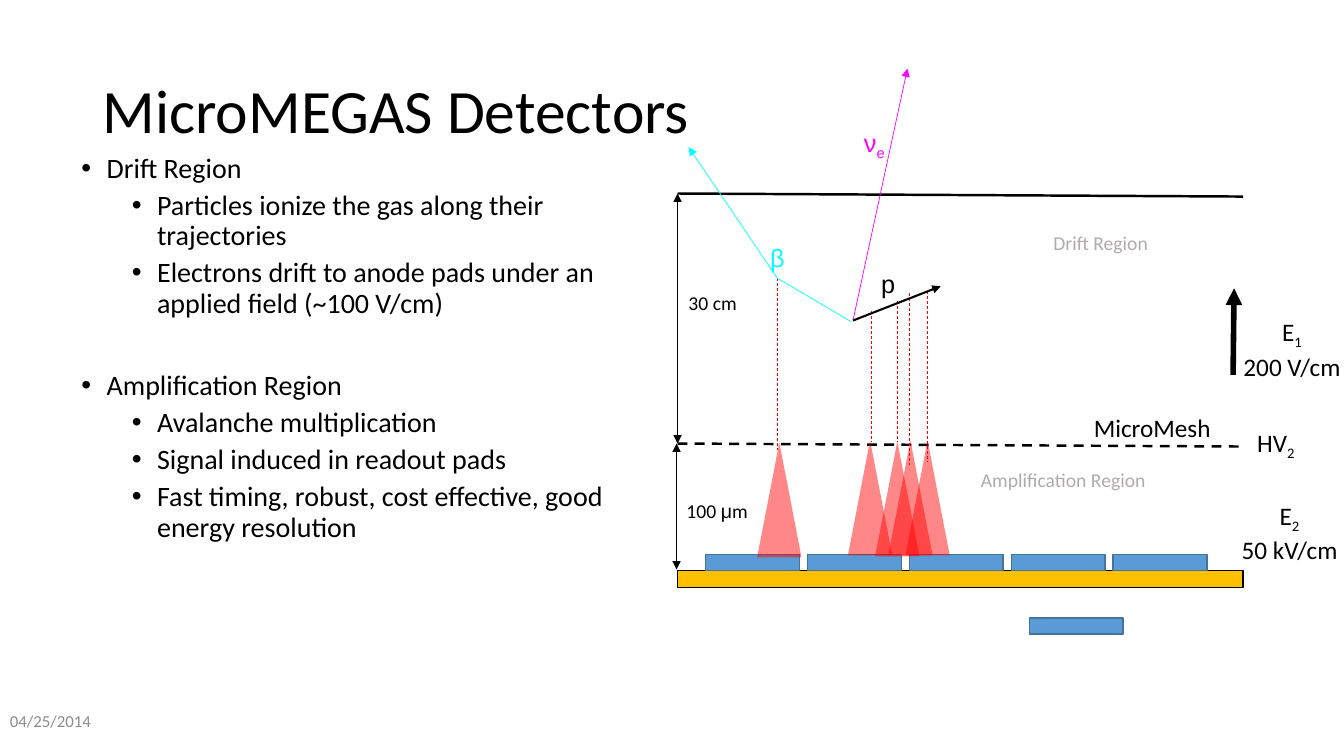
"""Build the MicroMEGAS detector slide."""
from pptx import Presentation, util as u
from pptx.dml.color import RGBColor
from pptx.enum import dml, shapes, text
from pptx.oxml import parse_xml
from pptx.oxml.ns import nsdecls, qn

BLACK, RED, CYAN, MAGENTA, GREY = "000000", "FF0000", "00FFFF", "FF00FF", "AFABAB"


def rgb(value):
    return RGBColor.from_string(value)


def element(tag, **attrs):
    e = parse_xml(f"<a:{tag} {nsdecls('a')}/>")
    for name, value in attrs.items():
        e.set(name, str(value))
    return e


def add_text(p, runs, size=18, color=BLACK, font="Calibri"):
    for run in [runs] if isinstance(runs, str) else runs:
        content, fmt = (run, {}) if isinstance(run, str) else run
        r = p.add_run()
        r.text = content
        r.font.size = u.Pt(size)
        r.font.name = fmt.get("font", font)
        r.font.color.rgb = rgb(color)
        if "base" in fmt:
            r._r.get_or_add_rPr().set("baseline", str(fmt["base"] * 1000))


def sub(content):
    return content, {"base": -25}


class Slide:
    def __init__(self, prs):
        self.s = prs.slides.add_slide(prs.slide_layouts[6])
        self.line_width = 0.5
        self.pad_size = (0.93, 0.16)
        self.cone_size = (0.44, 1.14)

    def box(self, x, y, w, h, paragraphs, wrap=False, middle=False, center=False, **fmt):
        tf = self.s.shapes.add_textbox(*map(u.Inches, (x, y, w, h))).text_frame
        tf.word_wrap = wrap
        if middle:
            tf.vertical_anchor = text.MSO_ANCHOR.MIDDLE
        for i, runs in enumerate(paragraphs):
            p = tf.add_paragraph() if i else tf.paragraphs[0]
            if center:
                p.alignment = text.PP_ALIGN.CENTER
            add_text(p, runs, **fmt)
        return tf

    def bullets(self, x, y, w, h, items):
        tf = self.box(x, y, w, h, [item for _, item, _ in items], wrap=True, size=20)
        for p, (level, _, before) in zip(tf.paragraphs, items):
            pPr = p._p.get_or_add_pPr()
            pPr.set("marL", str(u.Inches(0.25 + 0.5 * level)))
            pPr.set("indent", str(u.Inches(-0.25)))
            pPr.append(element("buFont", typeface="Arial"))
            pPr.append(element("buChar", char="•"))
            p.level = level
            p.line_spacing = 0.9
            p.space_before = u.Pt(before)

    def shape(self, kind, x, y, w, h, fill, line=None, alpha=None):
        sp = self.s.shapes.add_shape(kind, *map(u.Inches, (x, y, w, h)))
        sp.shadow.inherit = False
        sp.fill.solid()
        sp.fill.fore_color.rgb = rgb(fill)
        if alpha:
            color = sp._element.spPr.find(qn("a:solidFill"))[0]
            color.append(element("alpha", val=alpha * 1000))
        if line:
            sp.line.color.rgb = rgb(line)
            sp.line.width = u.Pt(1)
        else:
            sp.line.fill.background()

    def pad(self, x, y):
        self.shape(shapes.MSO_SHAPE.RECTANGLE, x, y, *self.pad_size, "5B9BD5", "43739E")

    def cone(self, x, y):
        self.shape(shapes.MSO_SHAPE.ISOSCELES_TRIANGLE, x, y, *self.cone_size, RED, alpha=47)

    def line(self, x1, y1, x2, y2, color=BLACK, width=None, dash=False, head=False, tail=False):
        c = self.s.shapes.add_connector(shapes.MSO_CONNECTOR.STRAIGHT,
                                        *map(u.Inches, (x1, y1, x2, y2)))
        c.line.color.rgb = rgb(color)
        c.line.width = u.Pt(width or self.line_width)
        if dash:
            c.line.dash_style = dml.MSO_LINE.DASH
        ln = c.line._get_or_add_ln()
        if head:
            ln.append(element("headEnd", type="triangle"))
        if tail:
            ln.append(element("tailEnd", type="triangle"))
        c._element.spPr.append(element("effectLst"))


def main():
    prs = Presentation()
    prs.slide_width, prs.slide_height = u.Inches(13.33), u.Inches(7.5)
    s = Slide(prs)

    title = s.box(0.92, 0.4, 11.5, 1.45, ["MicroMEGAS Detectors"],
                  wrap=True, middle=True, size=44)
    title.paragraphs[0].line_spacing = 0.9
    s.bullets(0.71, 1.48, 5.67, 4.76, [
        (0, "Drift Region", 0),
        (1, "Particles ionize the gas along their trajectories", 5),
        (1, "Electrons drift to anode pads under an applied field (~100 V/cm)", 5),
        (0, "Amplification Region", 37),
        (1, "Avalanche multiplication", 5),
        (1, "Signal induced in readout pads", 5),
        (1, "Fast timing, robust, cost effective, good energy resolution", 5),
    ])
    s.box(0, 6.95, 3, 0.4, ["04/25/2014"], wrap=True, middle=True, size=12, color="8C8C8C")

    s.shape(shapes.MSO_SHAPE.RECTANGLE, 6.72, 5.66, 5.61, 0.17, "FFC000", BLACK)
    for i in range(5):
        s.pad(7 + 1.01 * i, 5.5)
    s.pad(10.21, 6.13)

    s.line(6.72, 4.4, 12.33, 4.43, width=1.75, dash=True)
    s.line(6.72, 1.92, 12.33, 1.95, width=1.75)
    s.line(6.72, 1.92, 6.72, 4.4, head=True, tail=True)
    s.line(6.71, 4.4, 6.71, 5.65, head=True, tail=True)
    s.line(12.23, 3.72, 12.24, 2.86, width=4, tail=True)

    s.box(12.37, 4.19, 0.59, 0.4, [["HV", sub("2")]])
    s.box(12.2, 3.09, 1.23, 0.71, [["E", sub("1")], "200 V/cm"], center=True)
    s.box(12.18, 4.91, 1.22, 0.71, [["E", sub("2")], "50 kV/cm"], center=True)
    s.box(6.73, 2.84, 0.68, 0.34, ["30 cm"], size=14)
    s.box(6.71, 4.9, 0.82, 0.34, [["100 ", ("μ", {"font": "Arial"}), "m"]], size=14)
    s.box(10.75, 4.04, 1.37, 0.4, ["MicroMesh"])
    s.box(10.35, 2.24, 1.7, 0.34, ["Drift Region"], wrap=True, size=14, color=GREY)
    s.box(9.63, 4.59, 2.37, 0.34, ["Amplification Region"], wrap=True, size=14, color=GREY)
    s.box(7.54, 2.36, 0.34, 0.4, ["β"], font="Arial", color=CYAN)
    s.box(8.47, 1.21, 0.43, 0.4, [["ν", sub("e")]], font="Arial", color=MAGENTA)
    s.box(8.64, 2.61, 0.34, 0.4, ["p"], font="Arial")

    for x, y in [(7.51, 4.39), (8.41, 4.37), (8.68, 4.38), (8.98, 4.37), (8.81, 4.37)]:
        s.cone(x, y)
    for x, top, bottom in [(7.71, 2.76, 4.46), (8.64, 3.09, 4.39), (8.9, 2.99, 4.38),
                           (9.02, 2.91, 4.61), (9.2, 2.89, 4.58)]:
        s.line(x, top, x, bottom, RED, dash=True)

    s.line(8.46, 3.18, 9, 0.68, MAGENTA, tail=True)
    s.line(8.44, 3.19, 7.71, 2.76, CYAN)
    s.line(7.71, 2.76, 6.83, 1.46, CYAN, tail=True)
    s.line(8.46, 3.18, 9.33, 2.84, width=1.5, tail=True)

    prs.save("out.pptx")


if __name__ == "__main__":
    main()
